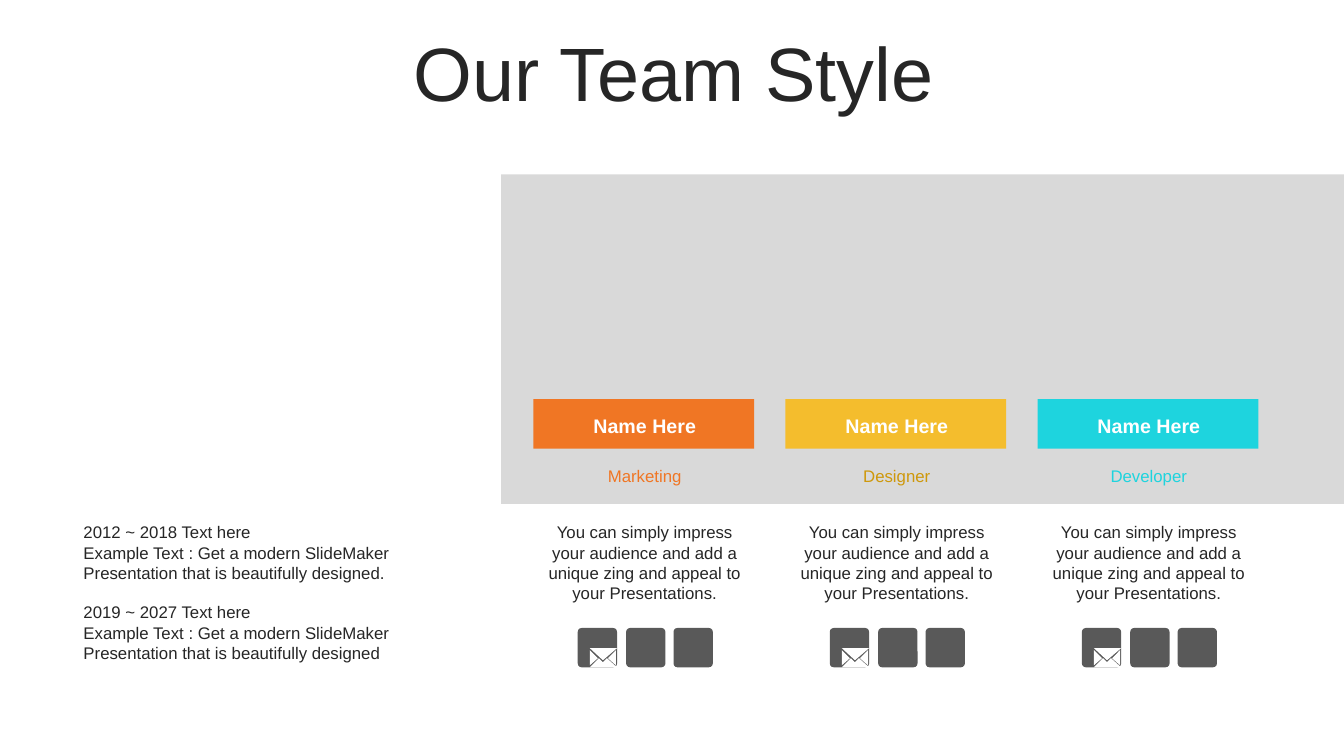
from pptx import Presentation
from pptx.dml.color import RGBColor
from pptx.enum.shapes import MSO_SHAPE as Form
from pptx.enum.text import MSO_ANCHOR as Anchor, MSO_AUTO_SIZE as Fit, PP_ALIGN as Align
from pptx.util import Inches, Pt

DARK = RGBColor(0x26, 0x26, 0x26)
PANEL = RGBColor(0xD9, 0xD9, 0xD9)
ICON = RGBColor(0x59, 0x59, 0x59)
WHITE = RGBColor(0xFF, 0xFF, 0xFF)
ORANGE = RGBColor(0xF0, 0x76, 0x24)
YELLOW = RGBColor(0xF4, 0xBD, 0x2D)
GOLD = RGBColor(0xCE, 0x98, 0x0B)
CYAN = RGBColor(0x1E, 0xD4, 0xDE)

TEAM = [("Marketing", ORANGE, ORANGE),
        ("Designer", YELLOW, GOLD),
        ("Developer", CYAN, CYAN)]
BLURB = ("You can simply impress your audience and add a unique zing "
         "and appeal to your Presentations.")
PITCH = "Example Text : Get a modern SlideMaker Presentation that is beautifully designed"
STORY = ["2012 ~ 2018 Text here", PITCH + ".", "2019 ~ 2027 Text here", PITCH]

# Envelope parts in hundredths of an inch from the icon corner
ENVELOPE = [[(6, 10), (19, 22), (33, 10)],
            [(6, 12), (6, 27), (14, 20)],
            [(32, 12), (24, 20), (32, 27)],
            [(6, 29), (15, 20), (19, 24), (23, 20), (33, 29)]]


class Board:
    font = "Arial"

    def __init__(self, slide):
        self.shapes = slide.shapes

    def paint(self, shape, color):
        shape.shadow.inherit = False
        shape.fill.solid()
        shape.fill.fore_color.rgb = color
        shape.line.fill.background()

    def block(self, box, color, form=Form.RECTANGLE):
        shape = self.shapes.add_shape(form, *map(Inches, box))
        self.paint(shape, color)
        return shape

    def tile(self, x, y):
        """Add a rounded icon square."""
        self.block((x, y, 0.39, 0.39), ICON, Form.ROUNDED_RECTANGLE).adjustments[0] = 0.1

    def letter(self, x, y):
        """Add a white envelope over an icon square."""
        pen = self.shapes.build_freeform(*ENVELOPE[0][0], scale=Inches(0.01))
        for part in ENVELOPE:
            pen.move_to(*part[0])
            pen.add_line_segments(part[1:], close=True)
        self.paint(pen.convert_to_shape(Inches(x), Inches(y)), WHITE)

    def text(self, box, lines, color=DARK, size=12, bold=False,
             align=Align.CENTER, frame=None, para=None):
        body = self.shapes.add_textbox(*map(Inches, box)).text_frame
        for key, value in {"word_wrap": True, **(frame or {})}.items():
            setattr(body, key, value)
        body.text = "\n".join(lines)
        for item in body.paragraphs:
            for key, value in {"alignment": align, **(para or {})}.items():
                setattr(item, key, value)
            for run in item.runs:
                look = {"name": self.font, "size": Pt(size), "bold": bold}
                for key, value in look.items():
                    setattr(run.font, key, value)
                run.font.color.rgb = color
        return body

    def member(self, x, role, fill, tint):
        """Add one team column."""
        left, wide = x + 0.02, 2.17
        self.block((x, 3.96, 2.19, 0.49), fill)
        self.text((left, 4.06, wide, 0.35), ["Name Here"], WHITE, 14, True,
                  para={"space_before": Pt(2.8)})
        self.text((left, 4.54, wide, 0.35), [role], tint,
                  frame={"vertical_anchor": Anchor.MIDDLE},
                  para={"space_before": Pt(2.4)})
        self.text((left, 5.13, wide, 0.91), [BLURB],
                  frame={"auto_size": Fit.SHAPE_TO_FIT_TEXT})
        for shift in (0.44, 0.92, 1.39):
            self.tile(x + shift, 6.23)
        self.letter(x + 0.5, 6.33)


def main():
    deck = Presentation()
    deck.slide_width, deck.slide_height = Inches(13.33), Inches(7.5)
    board = Board(deck.slides.add_slide(deck.slide_layouts[6]))

    board.block((4.97, 1.73, 8.36, 3.27), PANEL)
    board.text((0.35, 0.37, 12.66, 0.79), ["Our Team Style"], size=54,
               frame={"vertical_anchor": Anchor.MIDDLE},
               para={"line_spacing": 0.9, "space_before": Pt(10)})
    for spot, person in enumerate(TEAM):
        board.member(5.29 + 2.5 * spot, *person)
    story = board.text((0.73, 5.13, 3.73, 1.51), STORY, align=Align.LEFT,
                       frame={"auto_size": Fit.SHAPE_TO_FIT_TEXT})
    story.paragraphs[2].space_before = Pt(14)

    deck.save("out.pptx")


if __name__ == "__main__":
    main()
